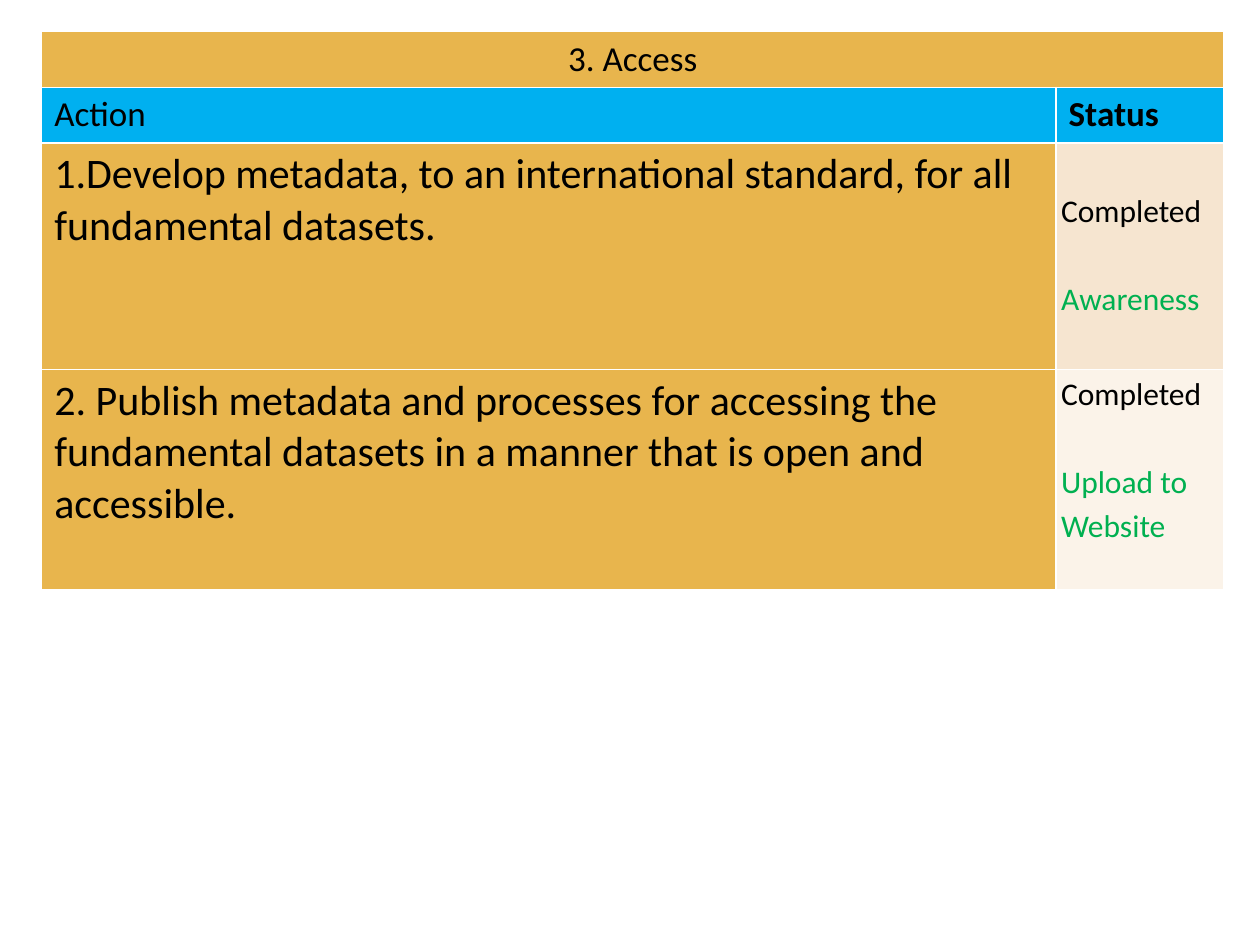
from lxml import etree
from pptx import Presentation
from pptx.dml.color import RGBColor
from pptx.enum import text
from pptx.oxml import ns
from pptx.util import Cm, Pt

HUES = {
    "gold": "E8B54D", "blue": "00B0F0", "sand": "F6E5D0", "cream": "FBF3E9",
    "black": "000000", "green": "00B050", "white": "FFFFFF",
}
COLS = [20.45, 3.38]
ROWS = [1.11, 1.11, 4.57, 4.45]


def hue(name):
    return RGBColor.from_string(HUES[name])


def add_edges(cell):
    """Give the cell thin white borders on all four sides."""
    props = cell._tc.get_or_add_tcPr()
    for spot, side in enumerate(("lnL", "lnR", "lnT", "lnB")):
        line = etree.Element(ns.qn("a:" + side), w=str(Pt(1)))
        fill = etree.SubElement(line, ns.qn("a:solidFill"))
        etree.SubElement(fill, ns.qn("a:srgbClr"), val=HUES["white"])
        props.insert(spot, line)


def set_font(para, size, color="black", bold=False):
    font = para.font
    font.name, font.size, font.bold = "Calibri", Pt(size), bold
    font.color.rgb = hue(color)


def fill_cell(cell, words, fill, size, bold=False):
    cell.fill.solid()
    cell.fill.fore_color.rgb = hue(fill)
    cell.text = words
    set_font(cell.text_frame.paragraphs[0], size, bold=bold)


def fill_status(cell, state, task, fill, top=0):
    """Write a state in black and, one line lower, the next task in green."""
    fill_cell(cell, state, fill, 18)
    cell.margin_left = cell.margin_right = Cm(0.1)
    cell.margin_top, cell.margin_bottom = Cm(top), 0
    frame = cell.text_frame
    para = frame.add_paragraph()
    para.text = task
    para.space_before = Pt(25)
    set_font(para, 18, "green")
    for para in frame.paragraphs:
        para.line_spacing = 1.15


def add_grid(slide):
    frame = slide.shapes.add_table(
        len(ROWS), len(COLS), Cm(0.84), Cm(0.64), Cm(sum(COLS)), Cm(sum(ROWS)))
    grid = frame.table
    for col, width in zip(grid.columns, COLS):
        col.width = Cm(width)
    for row, height in zip(grid.rows, ROWS):
        row.height = Cm(height)
    return grid


def main():
    deck = Presentation()
    deck.slide_width, deck.slide_height = Cm(25.4), Cm(19.05)
    slide = deck.slides.add_slide(deck.slide_layouts[6])
    grid = add_grid(slide)

    # Title row
    title = grid.cell(0, 0)
    title.merge(grid.cell(0, 1))
    fill_cell(title, "3. Access", "gold", 20)
    title.text_frame.paragraphs[0].alignment = text.PP_ALIGN.CENTER

    # Column heads
    fill_cell(grid.cell(1, 0), "Action", "blue", 20)
    fill_cell(grid.cell(1, 1), "Status", "blue", 20, bold=True)

    # Actions and their status
    fill_cell(grid.cell(2, 0), "1.Develop metadata, to an international standard, "
              "for all fundamental datasets.", "gold", 24)
    fill_status(grid.cell(2, 1), "Completed", "Awareness", "sand", top=0.89)
    fill_cell(grid.cell(3, 0), "2. Publish metadata and processes for accessing "
              "the fundamental datasets in a manner that is open and accessible.",
              "gold", 24)
    fill_status(grid.cell(3, 1), "Completed", "Upload to Website", "cream")

    # Borders
    for cell in grid.iter_cells():
        add_edges(cell)

    deck.save("out.pptx")


if __name__ == "__main__":
    main()
